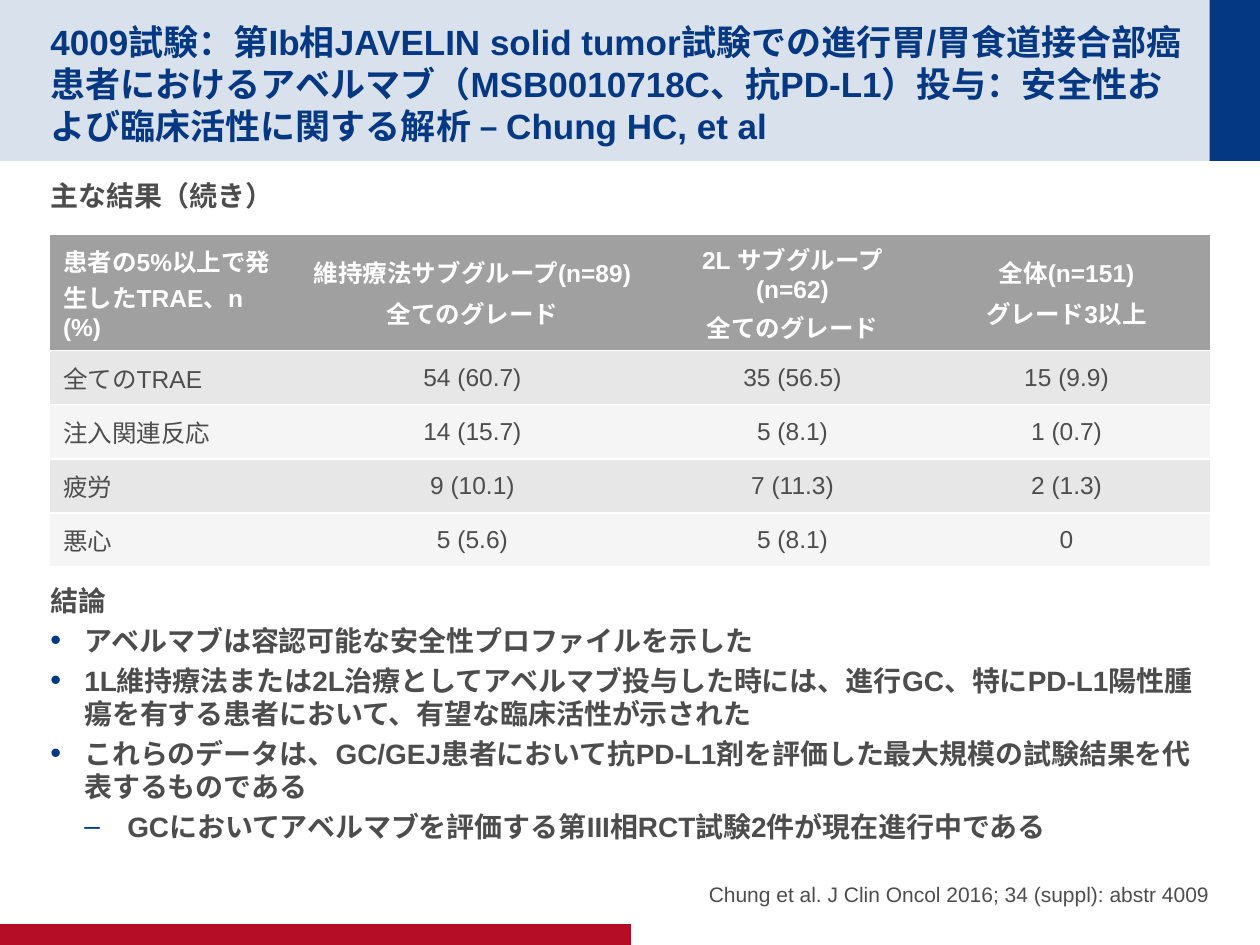
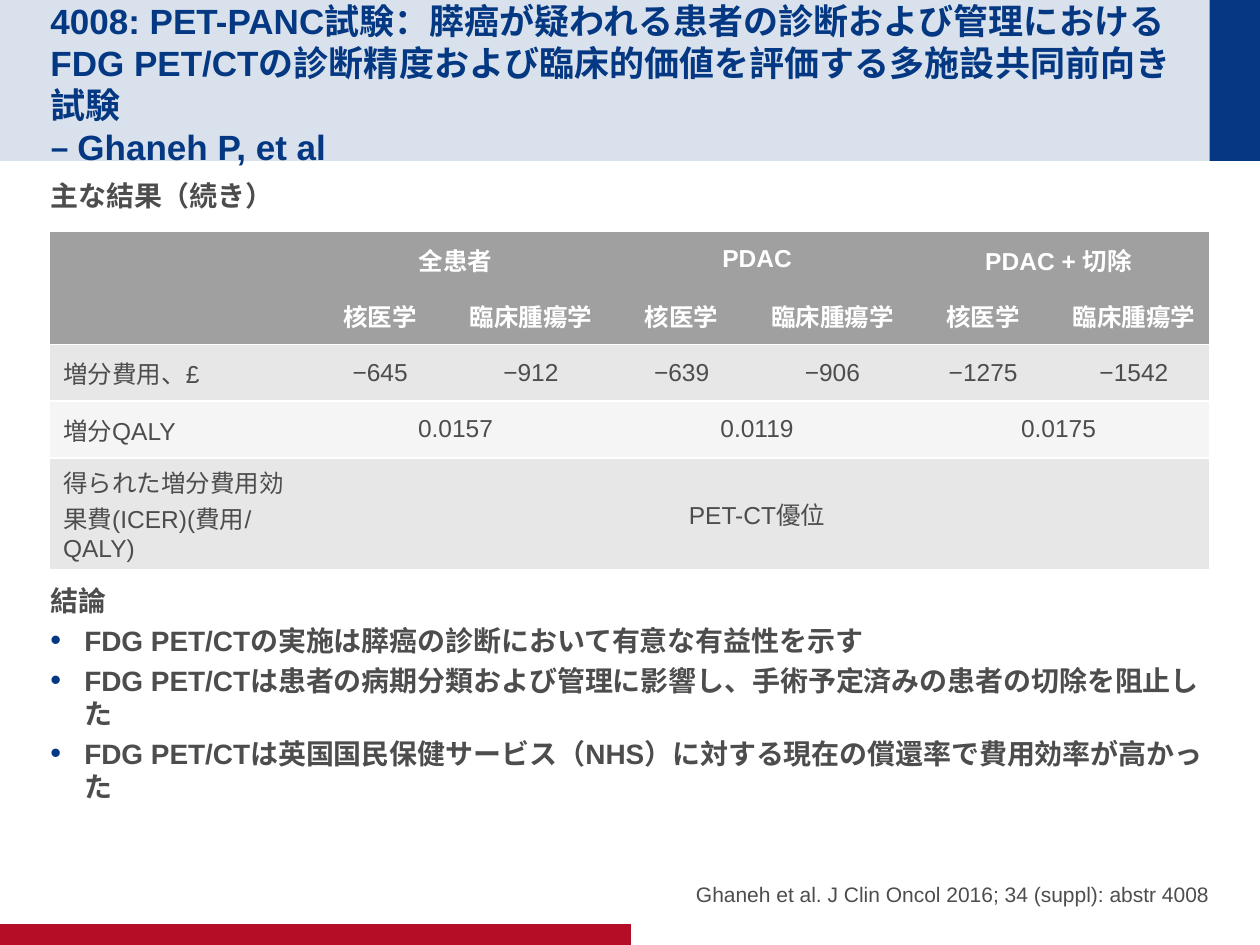
from dataclasses import dataclass
from typing import Any, NamedTuple, Optional

from lxml import etree
from pptx import Presentation
from pptx import util as u
from pptx.dml.color import RGBColor
from pptx.enum import shapes, text
from pptx.oxml import ns

LEFT, CENTER, RIGHT = text.PP_ALIGN.LEFT, text.PP_ALIGN.CENTER, text.PP_ALIGN.RIGHT
TITLE_ONLY = 5


@dataclass(frozen=True)
class Theme:
    font: str = "Arial"
    navy: str = "043882"
    pale: str = "D9E1EC"
    red: str = "B60D27"
    ink: str = "4D4D4D"
    white: str = "FFFFFF"
    head: str = "A0A0A0"
    stripes: tuple[str, str] = ("E7E7E7", "F5F5F5")
    title_size: float = 20
    body_size: float = 16
    table_size: float = 14
    cite_size: float = 12


class Box(NamedTuple):
    left: float
    top: float
    width: float
    height: float

    def emu(self) -> list[int]:
        return [u.Pt(v) for v in self]


class Band(NamedTuple):
    box: Box
    color: str


class Bullet(NamedTuple):
    char: str
    margin: float
    hang: float
    percent: int


class Point(NamedTuple):
    text: str
    bullet: Optional[Bullet] = None


@dataclass(frozen=True)
class Grid:
    top: float
    widths: list[float]
    heights: list[float]
    rows: list[list[Optional[str]]]
    head_rows: int = 1


@dataclass(frozen=True)
class Study:
    title: str
    grid: Grid
    conclusions: list[Point]
    citation: str


T = Theme()
MARGIN, CONTENT = 28.8, 662.4
BANDS = [
    Band(Box(0, 0, 720, 92), T.pale),
    Band(Box(691.2, 0, 28.8, 92), T.navy),
    Band(Box(0, 528, 360.6, 12), T.red),
]
TITLE_BOX = Box(MARGIN, 14.4, 648.7, 63.4)
HEADING_BOX = Box(MARGIN, 98.6, CONTENT, 28)
CONCLUSION_BOX = Box(MARGIN, 330, CONTENT, 150)
CITE_BOX = Box(365.8, 480.2, 325.4, 38.2)

DOT = Bullet("•", 19.4, 19.4, 110)
DASH = Bullet("–", 44, 24.5, 100)

LABEL_WIDTH = 145.4
STUDIES = [
    Study(
        "4009試験：第Ib相JAVELIN solid tumor試験での進行胃/胃食道接合部癌患者における"
        "アベルマブ（MSB0010718C、抗PD-L1）投与：安全性および臨床活性に関する解析 – Chung HC, et al",
        Grid(
            133.8,
            [133.2, 216, 149.8, 163.4],
            [66.4] + [30.9] * 4,
            [
                ["患者の5%以上で発生したTRAE、n (%)", "維持療法サブグループ(n=89)\n全てのグレード",
                 "2L サブグループ(n=62)\n全てのグレード", "全体(n=151)\nグレード3以上"],
                ["全てのTRAE", "54 (60.7)", "35 (56.5)", "15 (9.9)"],
                ["注入関連反応", "14 (15.7)", "5 (8.1)", "1 (0.7)"],
                ["疲労", "9 (10.1)", "7 (11.3)", "2 (1.3)"],
                ["悪心", "5 (5.6)", "5 (8.1)", "0"],
            ],
        ),
        [
            Point("アベルマブは容認可能な安全性プロファイルを示した", DOT),
            Point("1L維持療法または2L治療としてアベルマブ投与した時には、進行GC、特にPD-L1陽性腫瘍を"
                  "有する患者において、有望な臨床活性が示された", DOT),
            Point("これらのデータは、GC/GEJ患者において抗PD-L1剤を評価した最大規模の試験結果を"
                  "代表するものである", DOT),
            Point("GCにおいてアベルマブを評価する第III相RCT試験2件が現在進行中である", DASH),
        ],
        "Chung et al. J Clin Oncol 2016; 34 (suppl): abstr 4009",
    ),
    Study(
        "4008: PET-PANC試験：膵癌が疑われる患者の診断および管理におけるFDG PET/CTの診断精度および"
        "臨床的価値を評価する多施設共同前向き試験\v– Ghaneh P, et al",
        Grid(
            132,
            [LABEL_WIDTH] + [(CONTENT - LABEL_WIDTH) / 6] * 6,
            [32.4] * 4 + [63.6],
            [
                ["", "全患者", None, "PDAC", None, "PDAC + 切除", None],
                [""] + ["核医学", "臨床腫瘍学"] * 3,
                ["増分費用、£", "−645", "−912", "−639", "−906", "−1275", "−1542"],
                ["増分QALY", "0.0157", None, "0.0119", None, "0.0175", None],
                ["得られた増分費用効果費(ICER)(費用/QALY)", "PET-CT優位"] + [None] * 5,
            ],
            head_rows=2,
        ),
        [
            Point("FDG PET/CTの実施は膵癌の診断において有意な有益性を示す", DOT),
            Point("FDG PET/CTは患者の病期分類および管理に影響し、手術予定済みの患者の切除を阻止した", DOT),
            Point("FDG PET/CTは英国国民保健サービス（NHS）に対する現在の償還率で費用効率が高かった", DOT),
        ],
        "Ghaneh et al. J Clin Oncol 2016; 34 (suppl): abstr 4008",
    ),
]


def apply(obj: Any, values: dict[str, Any]) -> None:
    for name, value in values.items():
        setattr(obj, name, value)


def sub(parent: Any, tag: str, **attrs: str) -> Any:
    return etree.SubElement(parent, ns.qn(tag), attrs)


def style(p: Any, size: float, color: str, bold: bool, **layout: Any) -> None:
    apply(p, layout)
    for r in p.runs:
        apply(r.font, {"name": T.font, "size": u.Pt(size), "bold": bold})
        r.font.color.rgb = RGBColor.from_string(color)


def set_frame(tf: Any, anchor: Any, top: float, bottom: float) -> None:
    apply(tf, {
        "word_wrap": True,
        "auto_size": text.MSO_AUTO_SIZE.NONE,
        "vertical_anchor": anchor,
        "margin_left": 0,
        "margin_right": 0,
        "margin_top": u.Pt(top),
        "margin_bottom": u.Pt(bottom),
    })


def add_bullet(p: Any, b: Bullet) -> None:
    pPr = p._p.get_or_add_pPr()
    pPr.set("marL", str(u.Pt(b.margin)))
    pPr.set("indent", str(-u.Pt(b.hang)))
    sub(sub(pPr, "a:buClr"), "a:srgbClr", val=T.navy)
    sub(pPr, "a:buSzPct", val=str(b.percent * 1000))
    sub(pPr, "a:buFont", typeface=T.font)
    sub(pPr, "a:buChar", char=b.char)


def add_bands(s: Any) -> None:
    tree = s.slide_layout.shapes.element
    for i, band in enumerate(BANDS):
        sp = s.shapes.add_shape(shapes.MSO_SHAPE.RECTANGLE, *band.box.emu())
        sp.shadow.inherit = False
        sp.fill.solid()
        sp.fill.fore_color.rgb = RGBColor.from_string(band.color)
        sp.line.fill.background()
        tree.insert(2 + i, sp.element)


def set_title(s: Any, title: str) -> None:
    sp = s.shapes.title
    apply(sp, dict(zip(("left", "top", "width", "height"), TITLE_BOX.emu())))
    tf = sp.text_frame
    set_frame(tf, text.MSO_ANCHOR.MIDDLE, 3.6, 0)
    p = tf.paragraphs[0]
    p.text = title
    style(p, T.title_size, T.navy, True, alignment=LEFT, line_spacing=u.Pt(24))


def add_points(s: Any, box: Box, points: list[Point]) -> None:
    tf = s.shapes.add_textbox(*box.emu()).text_frame
    set_frame(tf, text.MSO_ANCHOR.TOP, 3.6, 3.6)
    tf.text = "\n".join(point.text for point in points)
    for p, point in zip(tf.paragraphs, points):
        style(p, T.body_size, T.ink, True, line_spacing=u.Pt(18.9), space_after=u.Pt(4))
        if point.bullet:
            add_bullet(p, point.bullet)


def add_citation(s: Any, citation: str) -> None:
    tf = s.shapes.add_textbox(*CITE_BOX.emu()).text_frame
    set_frame(tf, text.MSO_ANCHOR.BOTTOM, 0, 0)
    tf.text = citation
    style(tf.paragraphs[0], T.cite_size, T.ink, False, alignment=RIGHT)


def set_borders(cell: Any, lines: dict[str, bool]) -> None:
    tcPr = cell._tc.get_or_add_tcPr()
    for side, shown in lines.items():
        ln = sub(tcPr, f"a:ln{side}", w=str(u.Pt(1)))
        if shown:
            sub(sub(ln, "a:solidFill"), "a:srgbClr", val=T.white)
        else:
            sub(ln, "a:noFill")


def format_cell(cell: Any, row: int, col: int, head_rows: int) -> None:
    is_head = row < head_rows
    set_borders(cell, {
        "L": False,
        "R": False,
        "T": row == 0 or row >= head_rows,
        "B": row >= head_rows - 1,
    })
    cell.fill.solid()
    color = T.head if is_head else T.stripes[(row - head_rows) % 2]
    cell.fill.fore_color.rgb = RGBColor.from_string(color)
    cell.vertical_anchor = text.MSO_ANCHOR.MIDDLE
    for p in cell.text_frame.paragraphs:
        style(p, T.table_size, T.white if is_head else T.ink, is_head,
              alignment=CENTER if col else LEFT, space_before=u.Pt(2.8))
        p.font.size = u.Pt(T.table_size)


def add_grid(s: Any, g: Grid) -> None:
    box = Box(MARGIN, g.top, CONTENT, sum(g.heights))
    table = s.shapes.add_table(len(g.heights), len(g.widths), *box.emu()).table
    apply(table, {"first_row": False, "horz_banding": False})
    for column, width in zip(table.columns, g.widths):
        column.width = u.Pt(width)
    for row, height in zip(table.rows, g.heights):
        row.height = u.Pt(height)
    for i, values in enumerate(g.rows):
        for j, value in enumerate(values):
            cell = table.cell(i, j)
            cell.text_frame.text = value or ""
            format_cell(cell, i, j, g.head_rows)
        starts = [j for j, value in enumerate(values) if value is not None]
        for first, following in zip(starts, starts[1:] + [len(values)]):
            if following - first > 1:
                table.cell(i, first).merge(table.cell(i, following - 1))


def main() -> None:
    prs = Presentation()
    apply(prs, {"slide_width": u.Pt(720), "slide_height": u.Pt(540)})
    for i, study in enumerate(STUDIES):
        s = prs.slides.add_slide(prs.slide_layouts[TITLE_ONLY])
        if i == 0:
            add_bands(s)
        set_title(s, study.title)
        add_points(s, HEADING_BOX, [Point("主な結果（続き）")])
        add_grid(s, study.grid)
        add_points(s, CONCLUSION_BOX, [Point("結論"), *study.conclusions])
        add_citation(s, study.citation)
    prs.save("out.pptx")


if __name__ == "__main__":
    main()
